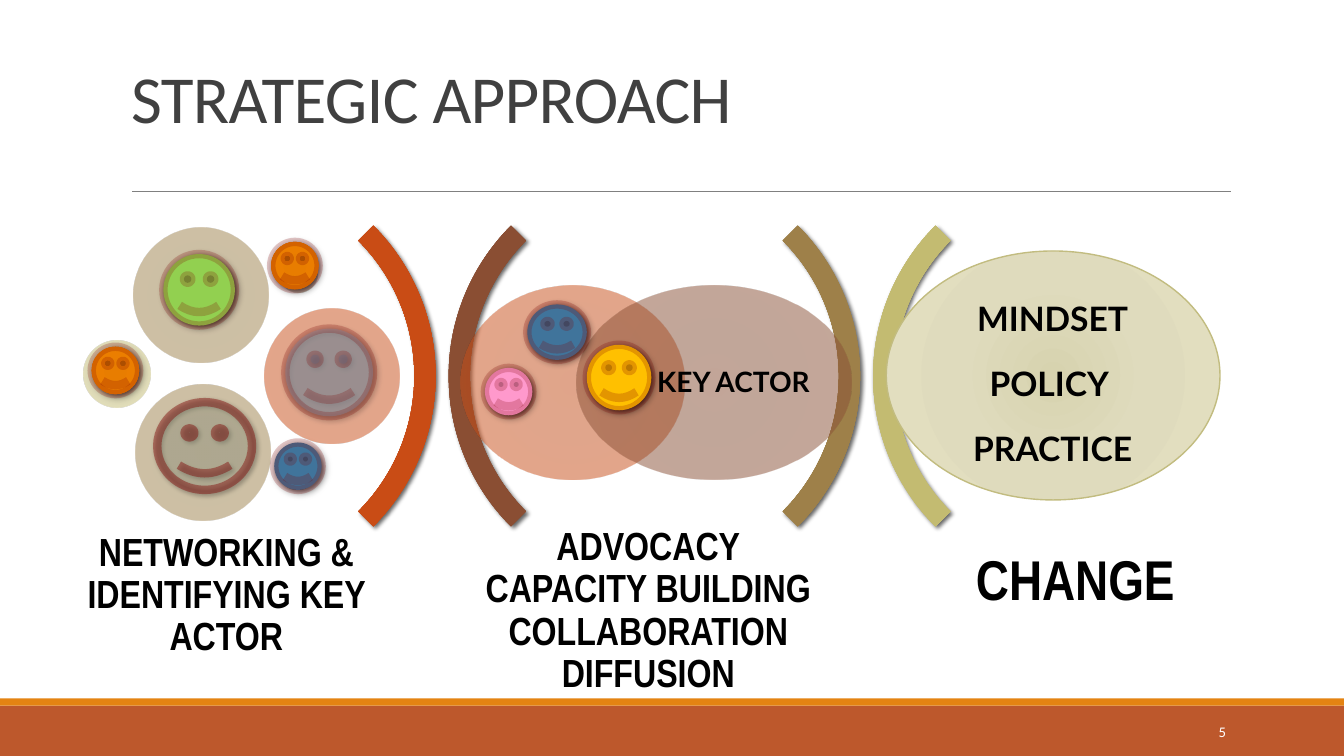
from lxml.etree import SubElement
from pptx import Presentation
from pptx.dml.color import RGBColor
from pptx.enum.shapes import MSO_CONNECTOR, MSO_SHAPE
from pptx.enum.text import MSO_ANCHOR, MSO_AUTO_SIZE, PP_ALIGN
from pptx.oxml import parse_xml
from pptx.oxml.ns import nsdecls, qn
from pptx.util import Inches, Pt

COLORS = {
    "black": "000000", "white": "FFFFFF", "heading": "404040", "rule": "808080",
    "band": "BD582C", "stripe": "E48312", "outline": "800000", "edge": "C2BC80",
    "lime": "92D050", "sky": "7EA9CA", "moss": "A2AF92", "blue": "40749B",
    "yellow": "FFC000", "pink": "FF99CC",
}
BLENDS = {
    "rust": ["C44A15", "C34C18", "C94C15", "C45525"],
    "brown": ["874C32", "864E34", "8A4E33", "8A553D"],
    "tan": ["9A7D48", "9A7E4A", "9E8049", "9E8454"],
    "olive": ["BEB76E", "BEB771", "C3BB71", "C5BF7D"],
    "sage": ["8A987B", "8B997D", "8D9C7E", "94A187"],
    "orange": ["E57B00", "E87D00", "EB7E00", "EF8407"],
    "cream": ["D7D3AF", "DFDBBD", "E5E1C1"],
}
STOPS = {3: [0, 45, 100], 4: [0, 34, 70, 100]}
CAPTION = {"name": "Arial Narrow", "size": Pt(28), "bold": True}
ARC_SIZE = 4.22


def rgb(name):
    return RGBColor.from_string(COLORS[name])


def apply_format(target, values):
    for name, value in values.items():
        setattr(target, name, value)


def set_opacity(solid, opacity):
    if opacity < 100:
        SubElement(solid[0], qn("a:alpha"), val=str(opacity * 1000))


def paint(shape, color, opacity=100):
    shape.fill.solid()
    solid = shape._element.spPr.find(qn("a:solidFill"))
    if color in COLORS:
        shape.fill.fore_color.rgb = rgb(color)
        set_opacity(solid, opacity)
        return
    blend = parse_xml(f'<a:gradFill {nsdecls("a")} rotWithShape="1"/>')
    stops = SubElement(blend, qn("a:gsLst"))
    hexes = BLENDS[color]
    for position, value in zip(STOPS[len(hexes)], hexes):
        stop = SubElement(stops, qn("a:gs"), pos=str(position * 1000))
        SubElement(stop, qn("a:srgbClr"), val=value)
        set_opacity(stop, opacity)
    center = SubElement(blend, qn("a:path"), path="circle")
    SubElement(center, qn("a:fillToRect"), {side: "100000" for side in "ltrb"})
    solid.getparent().replace(solid, blend)


def add_form(slide, kind, box, color, opacity=100, shaded=False):
    form = slide.shapes.add_shape(kind, *map(Inches, box))
    form.shadow.inherit = False
    form.line.fill.background()
    paint(form, color, opacity)
    if shaded:
        effects = form._element.spPr.find(qn("a:effectLst"))
        shade = SubElement(effects, qn("a:outerShdw"), blurRad=str(Pt(3)),
                           dist=str(Pt(2)), dir="2700000", algn="tl", rotWithShape="0")
        SubElement(shade, qn("a:srgbClr"), val=COLORS["black"])
        set_opacity(shade, 60)
    return form


def add_arc(slide, left, top, color, rotation):
    arc = add_form(slide, MSO_SHAPE.BLOCK_ARC, (left, top, ARC_SIZE, ARC_SIZE), color, shaded=True)
    arc.rotation = rotation
    for index, value in enumerate((135, 189, 0.05)):
        arc.adjustments[index] = value


def add_face(slide, box, color, opacity=100, line_opacity=22):
    face = add_form(slide, MSO_SHAPE.SMILEY_FACE, box, color, opacity, shaded=True)
    face.line.color.rgb = rgb("outline")
    face.line.width = Pt(6)
    set_opacity(face.line._ln.find(qn("a:solidFill")), line_opacity)


def write(holder, box, lines, font, color="black", inset=0, spacing=0.9, after=0,
          align=PP_ALIGN.CENTER, anchor=MSO_ANCHOR.MIDDLE):
    left, top, width, height = map(Inches, box)
    apply_format(holder, {"left": left, "top": top, "width": width, "height": height})
    frame = holder.text_frame
    margins = {f"margin_{side}": Inches(inset) for side in ("left", "right", "top", "bottom")}
    apply_format(frame, {"word_wrap": True, "auto_size": MSO_AUTO_SIZE.NONE,
                         "vertical_anchor": anchor, **margins})
    for index, line in enumerate(lines):
        paragraph = frame.paragraphs[0] if index == 0 else frame.add_paragraph()
        apply_format(paragraph, {"alignment": align, "line_spacing": spacing,
                                 "space_before": Pt(0), "space_after": Pt(after)})
        if holder.is_placeholder:
            properties = paragraph._p.get_or_add_pPr()
            properties.set("marL", "0")
            properties.set("indent", "0")
            SubElement(properties, qn("a:buNone"))
        run = paragraph.add_run()
        run.text = line
        apply_format(run.font, font)
        run.font.color.rgb = rgb(color)


def add_label(slide, box, lines, font, **options):
    label = slide.shapes.add_textbox(*map(Inches, box))
    write(label, box, lines, font, **options)


def raise_to_front(slide, holder):
    slide.shapes._spTree.append(holder._element)


def build_header(slide, box):
    left, top, width, height = box
    title = slide.shapes.title
    write(title, box, ["STRATEGIC APPROACH"], {"name": "Calibri", "size": Pt(48)},
          color="heading", inset=0.1, spacing=0.85, align=PP_ALIGN.LEFT, anchor=MSO_ANCHOR.BOTTOM)
    title.text_frame.margin_bottom = Inches(0.05)
    title.text_frame.paragraphs[0].runs[0].font._element.set("spc", "-50")
    rule_top = Inches(top + height + 0.49)
    rule = slide.shapes.add_connector(MSO_CONNECTOR.STRAIGHT, Inches(left + 0.11), rule_top,
                                      Inches(left + width + 0.01), rule_top)
    rule.line.color.rgb = rgb("rule")
    rule.line.width = Pt(0.5)
    SubElement(rule._element.spPr, qn("a:effectLst"))


def build_footer(slide, box):
    left, top, width, height = box
    add_form(slide, MSO_SHAPE.RECTANGLE, (left, top + 0.07, width, height - 0.07), "band")
    add_form(slide, MSO_SHAPE.RECTANGLE, (left, top, width, 0.07), "stripe")
    add_label(slide, (left + 10.83, top + 0.13, 1.43, 0.4), ["5"],
              {"name": "Calibri", "size": Pt(10.5)}, color="white", inset=0.1,
              spacing=1.0, align=PP_ALIGN.RIGHT)


def build_networking(slide, box):
    left, top, width, height = box
    add_arc(slide, left - 0.17, top - 0.6, "rust", 90)
    circles = [(1.05, 0.04, 1.34, "tan"), (0.56, 1.16, 0.66, "olive"), (2.5, 0.3, 0.38, "sage"),
               (2.35, 0.84, 1.34, "rust"), (2.49, 2.26, 0.38, "brown"), (1.07, 1.6, 1.34, "tan")]
    for x, y, size, color in circles:
        add_form(slide, MSO_SHAPE.OVAL, (left + x, top + y, size, size), color, 50)
    add_label(slide, (left, top + 2.54, width, height - 2.54),
              ["NETWORKING & IDENTIFYING KEY ACTOR"], CAPTION, inset=0.12)
    faces = [(0.64, 1.22, 0.47, 0.47, "orange"), (2.42, 0.18, 0.47, 0.47, "orange"),
             (2.56, 1.04, 0.87, 0.87, "sky", 39), (1.35, 0.3, 0.71, 0.71, "lime"),
             (1.29, 1.77, 0.94, 0.87, "moss", 21, 41), (2.45, 2.17, 0.47, 0.47, "blue")]
    for x, y, face_width, face_height, *look in faces:
        add_face(slide, (left + x, top + y, face_width, face_height), *look)


def build_advocacy(slide, box, actions):
    left, top, width, height = box
    add_arc(slide, left + 0.42, top - 0.6, "brown", 270)
    add_arc(slide, left + 0.28, top - 0.6, "tan", 90)
    for x, oval_width, color in [(0.54, 2.22, "rust"), (1.69, 2.73, "brown")]:
        add_form(slide, MSO_SHAPE.OVAL, (left + x, top + 0.61, oval_width, 1.93), color, 50)
    write(actions, (left, top + 2.97, width, height - 2.97),
          ["ADVOCACY", "CAPACITY BUILDING", "COLLABORATION", "DIFFUSION"], CAPTION, inset=0.12)
    raise_to_front(slide, actions)
    add_label(slide, (left + 2.46, top + 0.84, 1.57, 1.48), ["KEY ACTOR"],
              {"name": "Lato", "size": Pt(20), "bold": True})
    faces = [(1.79, 1.2, 0.64, 0.65, "yellow"), (0.78, 1.43, 0.47, 0.47, "pink"),
             (1.2, 0.8, 0.59, 0.55, "blue")]
    for x, y, face_width, face_height, color in faces:
        add_face(slide, (left + x, top + y, face_width, face_height), color)


def build_change(slide, box, outcomes):
    left, top, width, height = box
    add_arc(slide, left, top - 0.6, "olive", 270)
    goal = add_form(slide, MSO_SHAPE.OVAL, (left + 0.13, top + 0.27, 3.31, 2.47), "cream")
    goal.line.color.rgb = rgb("edge")
    goal.line.width = Pt(1)
    write(outcomes, (left + 0.61, top + 0.63, 2.34, 1.74), ["MINDSET", "POLICY ", "PRACTICE"],
          {"name": "Lato", "size": Pt(24), "bold": True}, spacing=1.4, after=6)
    raise_to_front(slide, outcomes)
    add_label(slide, (left + 0.1, top + 3.14, width - 0.1, height - 3.14), ["CHANGE"],
              {**CAPTION, "size": Pt(40)}, inset=0.17)


def main():
    deck = Presentation()
    deck.slide_width, deck.slide_height = Inches(13.33), Inches(7.5)
    slide = deck.slides.add_slide(deck.slide_layouts[3])
    actions, outcomes = slide.placeholders[1], slide.placeholders[2]
    build_footer(slide, (0, 6.93, 13.33, 0.57))
    build_header(slide, (1.2, 0.31, 11, 1.1))
    build_networking(slide, (0.27, 2.22, 3.95, 4.84))
    build_advocacy(slide, (4.03, 2.22, 4.8, 4.72), actions)
    build_change(slide, (8.66, 2.22, 3.91, 3.98), outcomes)
    deck.save("out.pptx")


if __name__ == "__main__":
    main()
